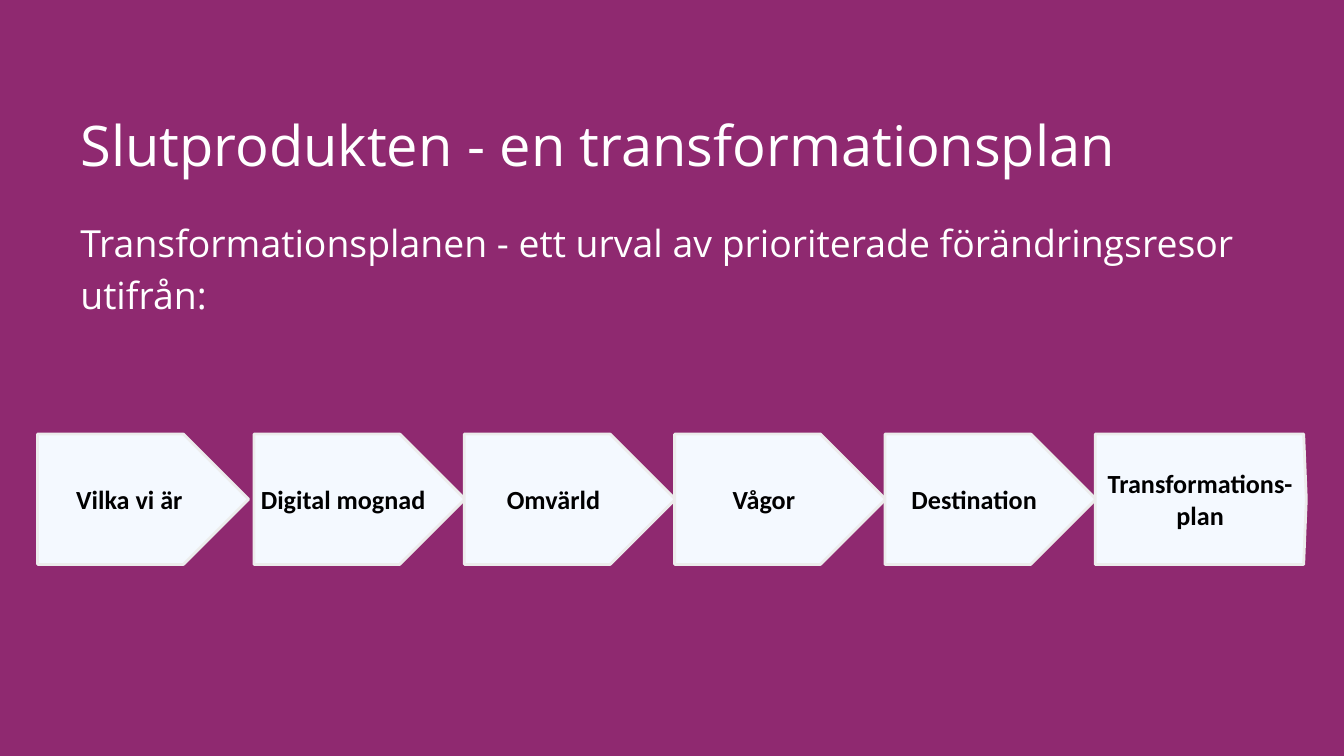
from pptx import Presentation
from pptx.dml.color import RGBColor
from pptx.enum.shapes import MSO_SHAPE
from pptx.enum.text import MSO_ANCHOR, MSO_AUTO_SIZE, PP_ALIGN
from pptx.util import Inches, Pt

PLUM = RGBColor(0x8F, 0x29, 0x70)
WHITE = RGBColor(0xFF, 0xFF, 0xFF)
BLACK = RGBColor(0, 0, 0)
PALE = RGBColor(0xF4, 0xF9, 0xFF)
GREY = RGBColor(0xEC, 0xEC, 0xEC)
ARROW = MSO_SHAPE.PENTAGON
LEFT, CENTER = PP_ALIGN.LEFT, PP_ALIGN.CENTER
TOP, MIDDLE = MSO_ANCHOR.TOP, MSO_ANCHOR.MIDDLE
NO_FIT = MSO_AUTO_SIZE.NONE

HEAD = {"name": "Open Sans", "size": Pt(30), "bold": False}
BODY = {"name": "Open Sans", "size": Pt(20), "bold": False}
STEP = {"name": "Calibri", "size": Pt(14), "bold": True}


def write(shape, text, font, color, align, anchor, pad):
    """Put one formatted paragraph in a shape."""
    frame = shape.text_frame
    values = {
        "word_wrap": True, "auto_size": NO_FIT, "vertical_anchor": anchor,
        "margin_left": Inches(pad[0]), "margin_right": Inches(pad[0]),
        "margin_top": Inches(pad[1]), "margin_bottom": Inches(pad[1]),
    }
    for key, value in values.items():
        setattr(frame, key, value)
    para = frame.paragraphs[0]
    para.text = text
    para.alignment = align
    for run in para.runs:
        for key, value in font.items():
            setattr(run.font, key, value)
        run.font.color.rgb = color
    return para


# A 16:9 slide
deck = Presentation()
deck.slide_width = Inches(10)
deck.slide_height = Inches(10 * 9 / 16)
slide = deck.slides.add_slide(deck.slide_layouts[5])

# Background
slide.background.fill.solid()
slide.background.fill.fore_color.rgb = PLUM

# Title
title = slide.shapes.title
title.left, title.top = Inches(0.5), Inches(0.6)
title.width, title.height = Inches(9), Inches(0.94)
write(title, "Slutprodukten - en transformationsplan",
      HEAD, WHITE, LEFT, MIDDLE, (0.1, 0.05))

# Introduction
intro = slide.shapes.add_textbox(Inches(0.5), Inches(1.54), Inches(9), Inches(2.85))
para = write(intro, "Transformationsplanen - ett urval av prioriterade "
             "förändringsresor utifrån:", BODY, WHITE, LEFT, TOP, (0.1, 0.05))
para.line_spacing = 1.15

# Row of steps: the first stands a little apart, the last is almost flat
steps = ["Vilka vi är", "Digital mognad", "Omvärld", "Vågor",
         "Destination", "Transformations-\nplan"]
for i, label in enumerate(steps):
    left = 1.89 + (i - 1) * 6.26 / 4 if i else 0.28
    step = slide.shapes.add_shape(
        ARROW, Inches(left), Inches(3.23), Inches(1.57), Inches(0.97))
    step.adjustments[0] = 0.02 if i == len(steps) - 1 else 0.5
    step.shadow.inherit = False
    step.fill.solid()
    step.fill.fore_color.rgb = PALE
    step.line.color.rgb = GREY
    step.line.width = Pt(1.5)
    write(step, label, STEP, BLACK, CENTER, MIDDLE, (0.04, 0.04))
    if i == 0:
        step.text_frame.margin_left = Inches(0.08)

deck.save("out.pptx")
